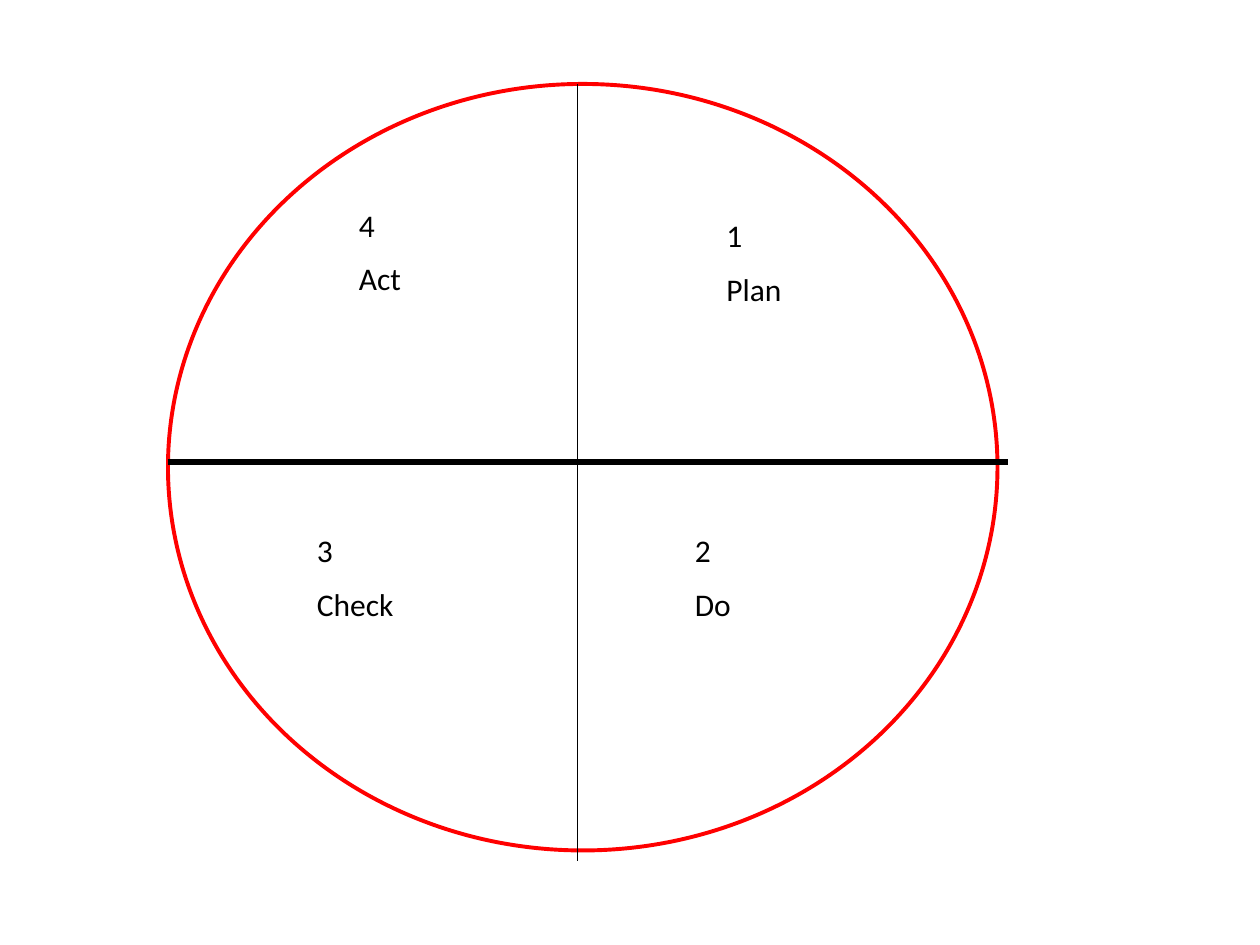
from lxml.etree import SubElement
from pptx import Presentation
from pptx.dml.color import RGBColor
from pptx.enum.shapes import MSO_CONNECTOR, MSO_SHAPE
from pptx.enum.text import MSO_AUTO_SIZE
from pptx.oxml.ns import qn
from pptx.util import Pt

EMU_PER_PX = 7620
RED = RGBColor(0xFF, 0x00, 0x00)
BLACK = RGBColor(0x00, 0x00, 0x00)
FONT_FORMAT = {"name": "Calibri", "size": Pt(18)}
LABEL_HEIGHT = 132
PHASES = [
    (("1", "Plan"), 520, 120, 120),
    (("4", "Act"), 170, 110, 170),
    (("2", "Do"), 490, 420, 150),
    (("3", "Check"), 130, 420, 140),
]


def px(*lengths):
    return [length * EMU_PER_PX for length in lengths]


def format_line(line, color, width):
    line.color.rgb = color
    line.width = Pt(width)


def add_label(slide, texts, box):
    frame = slide.shapes.add_textbox(*px(*box)).text_frame
    frame.word_wrap = True
    frame.auto_size = MSO_AUTO_SIZE.SHAPE_TO_FIT_TEXT
    for index, text in enumerate(texts):
        paragraph = frame.add_paragraph() if index else frame.paragraphs[0]
        paragraph.space_before = Pt(9)
        run = paragraph.add_run()
        run.text = text
        for name, value in FONT_FORMAT.items():
            setattr(run.font, name, value)
        run.font.color.rgb = BLACK


def add_divider(slide, ends, width):
    connector = slide.shapes.add_connector(MSO_CONNECTOR.STRAIGHT, *px(*ends))
    format_line(connector.line, BLACK, width)
    SubElement(connector._element.spPr, qn("a:effectLst"))


def add_cycle(slide, left, top, width, height):
    circle = slide.shapes.add_shape(MSO_SHAPE.OVAL, *px(left, top, width, height))
    circle.shadow.inherit = False
    circle.fill.background()
    format_line(circle.line, RED, 2.25)
    for texts, x, y, label_width in PHASES:
        add_label(slide, texts, (left + x, top + y, label_width, LABEL_HEIGHT))
    middle_x, middle_y = left + 390, top + 360
    add_divider(slide, (left, middle_y, left + width + 10, middle_y), 3)
    add_divider(slide, (middle_x, top, middle_x, top + height + 10), 0.75)


def main():
    presentation = Presentation()
    presentation.slide_width, presentation.slide_height = px(1200, 900)
    slide = presentation.slides.add_slide(presentation.slide_layouts[6])
    add_cycle(slide, 160, 80, 790, 730)
    presentation.save("out.pptx")


if __name__ == "__main__":
    main()
